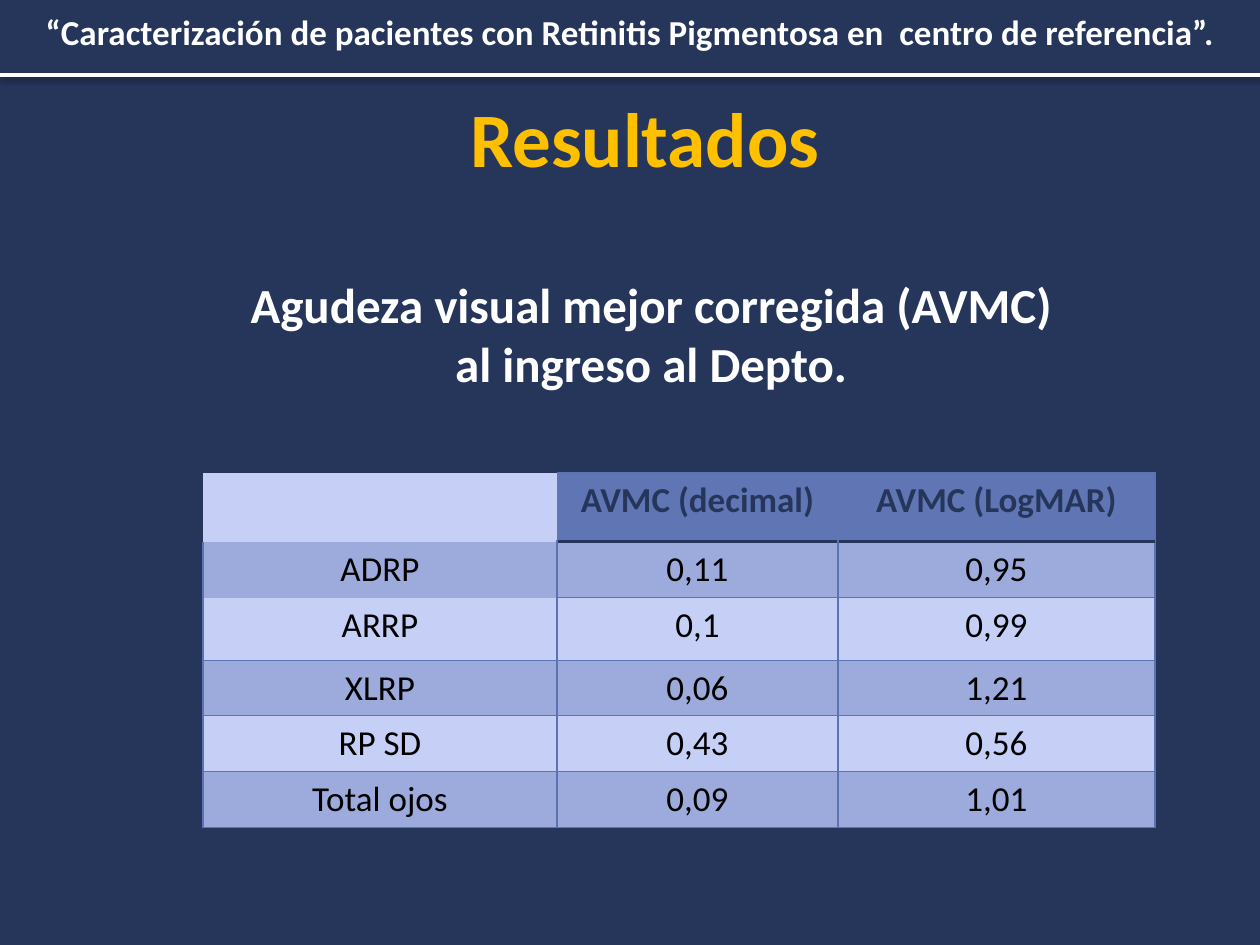
import pptx
import pptx.util
import pptx.dml.color
import pptx.enum.shapes
import pptx.enum.text
import pptx.oxml
import pptx.oxml.ns

COLORS = {
    "back": "26365B", "white": "FFFFFF", "gold": "FFC000", "black": "000000",
    "head": "6076B4", "dark": "9DABDC", "light": "C6CFF6", "edge": "5C72B2",
}
BOXES = [
    ("Resultados", (25, 84, 1240, 131), dict(size=44, color="gold", space=7)),
    ("“Caracterización de pacientes con Retinitis Pigmentosa en  centro de referencia”.",
     (16, 0, 1228, 63), dict(size=20, middle=True)),
    ("Agudeza visual mejor corregida (AVMC) al ingreso al Depto.",
     (231, 268, 840, 131), dict(size=28)),
]
ROWS = [
    ("", "AVMC (decimal)", "AVMC (LogMAR)"),
    ("ADRP", "0,11", "0,95"),
    ("ARRP", "0,1", "0,99"),
    ("XLRP", "0,06", "1,21"),
    ("RP SD", "0,43", "0,56"),
    ("Total ojos", "0,09", "1,01"),
]
SPOT = (203, 473)
WIDTHS = (354, 281, 317)
HEIGHTS = (69, 56, 63, 55, 56, 56)
SCALE = 914400 // 126
SPACE = pptx.oxml.ns.nsdecls("a")


def px(num):
    return pptx.util.Emu(round(num * 914400 / 126))


def tint(name):
    return pptx.dml.color.RGBColor.from_string(COLORS[name])


def write(frame, text, size=20, color="white", bold=True, space=0):
    par = frame.paragraphs[0]
    par.alignment = pptx.enum.text.PP_ALIGN.CENTER
    par.space_before = pptx.util.Pt(space)
    run = par.add_run()
    run.text = text
    run.font.name = "Calibri"
    run.font.size = pptx.util.Pt(size)
    run.font.bold = bold
    run.font.color.rgb = tint(color)


def add_box(slide, text, area, middle=False, **form):
    frame = slide.shapes.add_textbox(*map(px, area)).text_frame
    frame.word_wrap = True
    frame.margin_left = frame.margin_right = pptx.util.Inches(0.05)
    frame.margin_top = frame.margin_bottom = pptx.util.Inches(0.05)
    if middle:
        frame.vertical_anchor = pptx.enum.text.MSO_ANCHOR.MIDDLE
    write(frame, text, **form)


def add_rule(slide):
    rule = slide.shapes.add_connector(
        pptx.enum.shapes.MSO_CONNECTOR.STRAIGHT, 0, px(75), px(1260), px(75))
    rule.line.color.rgb = tint("white")
    rule.line.width = pptx.util.Pt(2)
    rule._element.spPr.append(pptx.oxml.parse_xml(
        f'<a:effectLst {SPACE}><a:outerShdw blurRad="38100" dist="22860" dir="5400000">'
        f'<a:srgbClr val="{COLORS["black"]}"><a:alpha val="35000"/></a:srgbClr>'
        '</a:outerShdw></a:effectLst>'))


def set_edges(cell, edges):
    props = cell._tc.get_or_add_tcPr()
    for side in "LRTB":
        color, width = edges.get(side, (None, 0))
        paint = (f'<a:solidFill><a:srgbClr val="{COLORS[color]}"/></a:solidFill>'
                 if color else "<a:noFill/>")
        props.append(pptx.oxml.parse_xml(
            f'<a:ln{side} {SPACE} w="{pptx.util.Pt(width)}">{paint}</a:ln{side}>'))


def pick_edges(row, col):
    thin, thick = ("edge", 0.75), ("back", 2)
    if row == 0:
        if col == 0:
            return {}
        edges = {"T": thin, "B": thick}
        if col == 2:
            edges["R"] = thin
        return edges
    edges = dict.fromkeys("LRTB", thin)
    if row == 1:
        edges["T"] = thick
    if col == 0:
        if row < 3:
            del edges["T"]
        if row == 1:
            del edges["B"]
    return edges


def add_grid(slide):
    grid = slide.shapes.add_table(
        len(ROWS), len(WIDTHS), *map(px, SPOT), px(sum(WIDTHS)), px(sum(HEIGHTS))).table
    grid.first_row = grid.horz_banding = False
    for col, width in enumerate(WIDTHS):
        grid.columns[col].width = px(width)
    for row, (height, texts) in enumerate(zip(HEIGHTS, ROWS)):
        grid.rows[row].height = px(height)
        for col, text in enumerate(texts):
            cell = grid.cell(row, col)
            set_edges(cell, pick_edges(row, col))
            top = row == 0 and col > 0
            cell.fill.solid()
            cell.fill.fore_color.rgb = tint("head" if top else "dark" if row % 2 else "light")
            if text:
                write(cell.text_frame, text, color="back" if top else "black", bold=top)


def main():
    deck = pptx.Presentation()
    deck.slide_width, deck.slide_height = px(1260), px(945)
    slide = deck.slides.add_slide(deck.slide_layouts[6])
    slide.background.fill.solid()
    slide.background.fill.fore_color.rgb = tint("back")
    add_rule(slide)
    for text, area, form in BOXES:
        add_box(slide, text, area, **form)
    add_grid(slide)
    deck.save("out.pptx")


if __name__ == "__main__":
    main()
